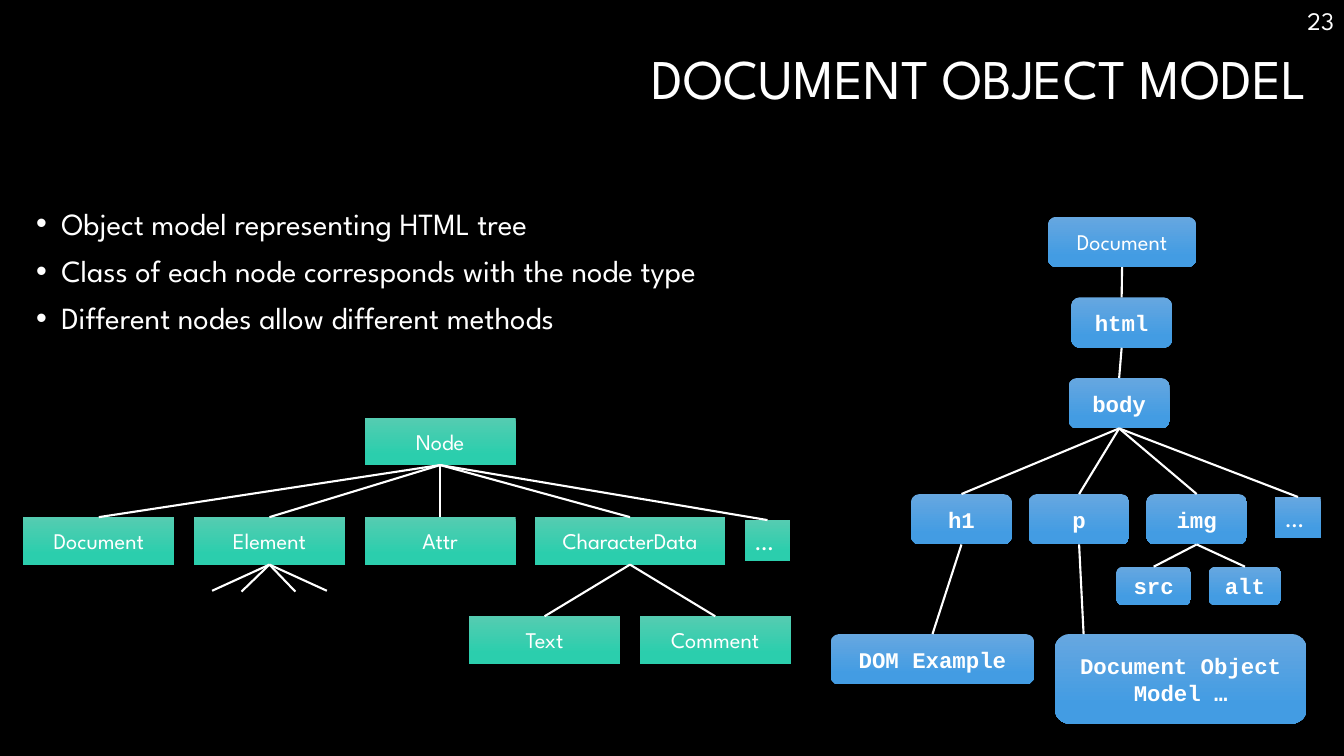
from dataclasses import dataclass

from lxml.etree import SubElement
from pptx import Presentation
from pptx.dml.color import RGBColor
from pptx.enum.shapes import MSO_CONNECTOR, MSO_SHAPE
from pptx.enum.text import MSO_ANCHOR, MSO_AUTO_SIZE, PP_ALIGN
from pptx.oxml.ns import qn
from pptx.util import Pt


@dataclass(frozen=True)
class Theme:
    background: str = "000000"
    ink: str = "FFFFFF"
    blue: tuple = ("66A7E0", "439CE3")
    green: tuple = ("55CCB1", "2BCEAD")
    sans: str = "League Spartan"
    mono: str = "Courier New"
    title_size: int = 40
    body_size: int = 22
    note_size: int = 18
    node_size: int = 16
    line_width: float = 1.5


THEME = Theme()
BOTTOM, TOP = 2, 0

BULLETS = [
    "Object model representing HTML tree",
    "Class of each node corresponds with the node type",
    "Different nodes allow different methods",
]


def write(para, text, size, font=THEME.sans, bold=False, align=PP_ALIGN.LEFT,
          spacing=None, before=None):
    para.alignment = align
    if spacing is not None:
        para.line_spacing = spacing
    if before is not None:
        para.space_before = Pt(before)
    span = para.add_run()
    span.text = text
    span.font.size = Pt(size)
    span.font.name = font
    span.font.bold = bold
    span.font.color.rgb = RGBColor.from_string(THEME.ink)


def place(shape, left, top, width, height):
    shape.left, shape.top = Pt(left), Pt(top)
    shape.width, shape.height = Pt(width), Pt(height)


def add_title(page, text):
    title = page.shapes.title
    place(title, 18.7, 33.1, 922.3, 101.5)
    frame = title.text_frame
    frame.auto_size = MSO_AUTO_SIZE.NONE
    frame.vertical_anchor = MSO_ANCHOR.TOP
    write(frame.paragraphs[0], text, THEME.title_size, align=PP_ALIGN.RIGHT, spacing=0.9)


def add_text_frame(page, left, top, width, height):
    frame = page.shapes.add_textbox(Pt(left), Pt(top), Pt(width), Pt(height)).text_frame
    frame.word_wrap = True
    return frame


def add_bullets(page, lines):
    frame = add_text_frame(page, 18.7, 145.4, 643.7, 101.5)
    for index, line in enumerate(lines):
        para = frame.add_paragraph() if index else frame.paragraphs[0]
        write(para, line, THEME.body_size, spacing=0.9, before=10)
        properties = para._p.get_or_add_pPr()
        properties.set("marL", str(Pt(18)))
        properties.set("indent", str(-Pt(18)))
        SubElement(properties, qn("a:buFont"), typeface="Arial")
        SubElement(properties, qn("a:buChar"), char="•")


def add_node(page, text, left, top, width, height, colors, kind=MSO_SHAPE.RECTANGLE,
             font=THEME.sans):
    box = page.shapes.add_shape(kind, Pt(left), Pt(top), Pt(width), Pt(height))
    box.shadow.inherit = False
    box.line.fill.background()
    box.fill.gradient()
    box.fill.gradient_angle = 270
    for stop, position, color in zip(box.fill.gradient_stops, (0, 0.78), colors):
        stop.position = position
        stop.color.rgb = RGBColor.from_string(color)
    frame = box.text_frame
    frame.word_wrap = True
    frame.vertical_anchor = MSO_ANCHOR.MIDDLE
    write(frame.paragraphs[0], text, THEME.node_size, font=font,
          bold=font == THEME.mono, align=PP_ALIGN.CENTER)
    return box


def add_more(page, left, top, colors):
    """Add the small box that stands for further nodes."""
    box = add_node(page, "…", left, top, 32.6, 29.1, colors)
    frame = box.text_frame
    frame.word_wrap = False
    frame.vertical_anchor = MSO_ANCHOR.TOP
    para = frame.paragraphs[0]
    para.alignment = PP_ALIGN.LEFT
    para.runs[0].font.size = Pt(THEME.note_size)
    return box


def add_branch(page, parent, child=None, end=(0, 0)):
    """Draw a line from the bottom of parent to the top of child, or to a free end."""
    branch = page.shapes.add_connector(MSO_CONNECTOR.STRAIGHT, 0, 0, Pt(end[0]), Pt(end[1]))
    branch.begin_connect(parent, BOTTOM)
    if child is not None:
        branch.end_connect(child, TOP)
    branch.line.width = Pt(THEME.line_width)
    branch.line.color.rgb = RGBColor.from_string(THEME.ink)
    SubElement(branch._element.spPr, qn("a:effectLst"))


def add_class_tree(page):
    left, step, width, height = 16.6, 121.9, 108, 33.9
    node_top, class_top, data_top = 298.3, 369.4, 440.2

    def add_class(text, x, top, wide=width):
        return add_node(page, text, x, top, wide, height, THEME.green)

    node = add_class("Node", left + 2 * step, node_top)
    names = ["Document", "Element", "Attr", "CharacterData"]
    classes = {
        name: add_class(name, left + index * step, class_top,
                        135.4 if name == "CharacterData" else width)
        for index, name in enumerate(names)
    }
    more = add_more(page, 531.9, 371.5, THEME.green)
    for child in [*classes.values(), more]:
        add_branch(page, node, child)

    for index, name in enumerate(["Text", "Comment"]):
        child = add_class(name, 335 + index * step, data_top)
        add_branch(page, classes["CharacterData"], child)

    element_center = left + step + width / 2
    for offset, end_top in [(-41, 422), (-20, 422.6), (18.5, 422.6), (41, 422)]:
        add_branch(page, classes["Element"], end=(element_center + offset, end_top))


def add_document_tree(page):
    top, row_step, height = 154.8, 57.6, 36
    tag_left, tag_step, tag_top, tag_width = 650.8, 84, 352.9, 72
    attribute_top, content_top = 404.8, 452.9

    def add_item(text, x, y, wide=tag_width, high=height, font=THEME.mono):
        return add_node(page, text, x, y, wide, high, THEME.blue,
                        kind=MSO_SHAPE.ROUNDED_RECTANGLE, font=font)

    document = add_item("Document", 748.6, top, wide=105.8, font=THEME.sans)
    html = add_item("html", 765.2, top + row_step)
    body = add_item("body", 763.4, top + 2 * row_step)
    add_branch(page, document, html)
    add_branch(page, html, body)

    heading, paragraph, image = [
        add_item(tag, tag_left + index * tag_step, tag_top)
        for index, tag in enumerate(["h1", "p", "img"])
    ]
    more = add_more(page, 910.8, 355, THEME.blue)
    for child in (heading, paragraph, image, more):
        add_branch(page, body, child)

    for name, left, width in [("src", 797.4, 53.4), ("alt", 863.4, 51.8)]:
        add_branch(page, image, add_item(name, left, attribute_top, width, 27.4))

    add_branch(page, heading, add_item("DOM Example", 593.5, content_top, 145.2))
    add_item("Document Object Model …", 753.4, content_top, 180, 64)
    add_branch(page, paragraph, end=(774, content_top))


def main():
    deck = Presentation()
    deck.slide_width, deck.slide_height = Pt(960), Pt(540)
    page = deck.slides.add_slide(deck.slide_layouts[5])
    page.background.fill.solid()
    page.background.fill.fore_color.rgb = RGBColor.from_string(THEME.background)

    add_title(page, "DOCUMENT OBJECT MODEL")
    number = add_text_frame(page, 752.4, 0, 207.6, 29.1)
    write(number.paragraphs[0], "23", THEME.note_size, align=PP_ALIGN.RIGHT)
    add_document_tree(page)
    add_bullets(page, BULLETS)
    add_class_tree(page)
    deck.save("out.pptx")


if __name__ == "__main__":
    main()
